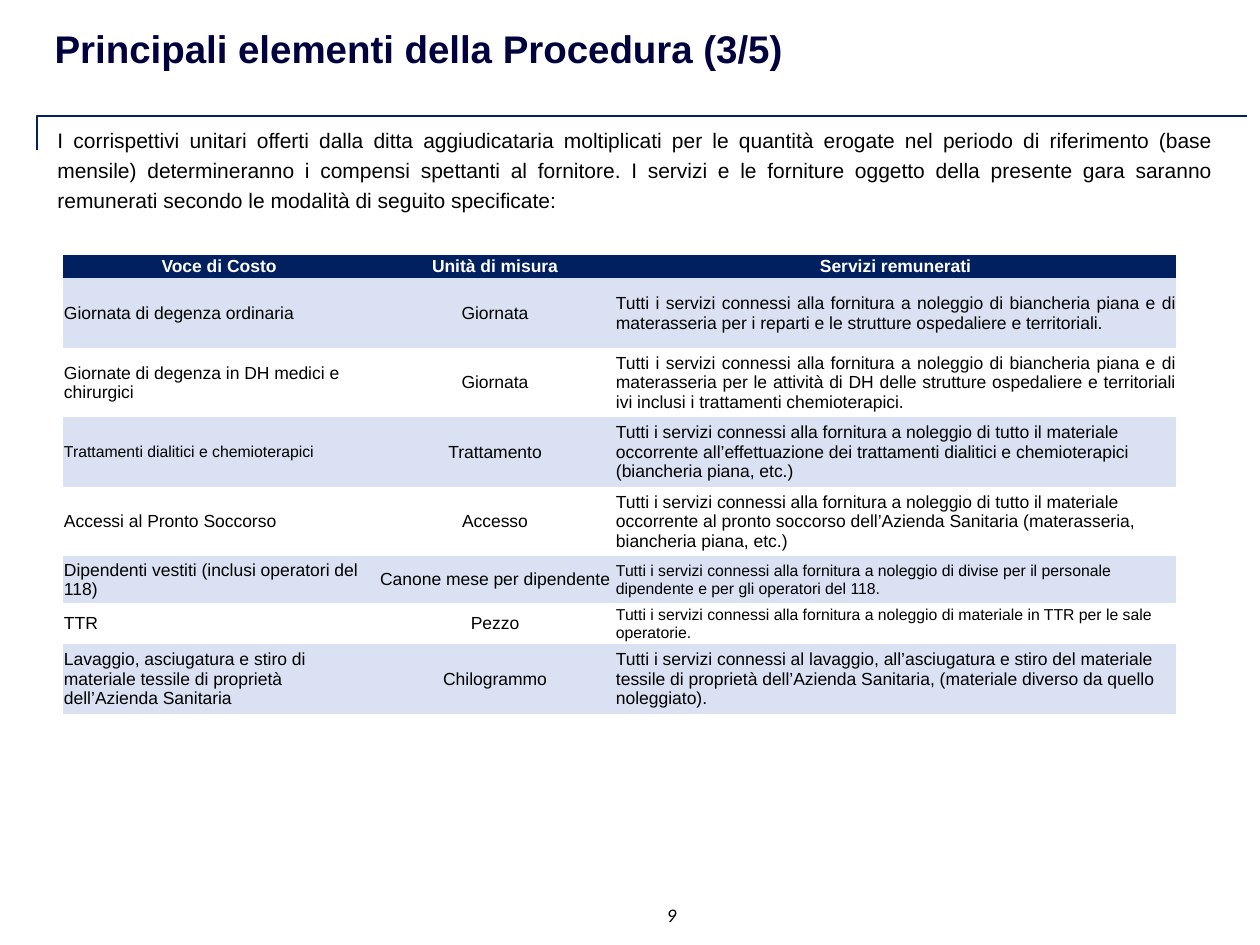
from typing import NamedTuple

from lxml.etree import SubElement
from pptx import Presentation
from pptx.dml.color import RGBColor
from pptx.enum.shapes import MSO_CONNECTOR as Connector
from pptx.enum.text import MSO_ANCHOR as Anchor, MSO_AUTO_SIZE as AutoSize, PP_ALIGN as Align
from pptx.oxml.ns import qn
from pptx.util import Emu, Pt

PX_PER_INCH = 126
NAVY = RGBColor(0x00, 0x20, 0x60)
TITLE_NAVY = RGBColor(0x00, 0x00, 0x3E)
PALE_BLUE = RGBColor(0xD9, 0xE1, 0xF2)
BLACK = RGBColor(0, 0, 0)
WHITE = RGBColor(0xFF, 0xFF, 0xFF)
NO_STYLE_NO_GRID = "{2D5ABB26-0587-4C30-8999-92F81FD0307C}"


class Box(NamedTuple):
    left: int
    top: int
    width: int
    height: int


class CostItem(NamedTuple):
    name: str
    unit: str
    services: str
    height: int
    name_size: int = 10
    services_size: int = 10
    services_align: Align = Align.LEFT


TITLE = "Principali elementi della Procedura (3/5)"
INTRO = (
    "I corrispettivi unitari offerti dalla ditta aggiudicataria moltiplicati per le quantità "
    "erogate nel periodo di riferimento (base mensile) determineranno i compensi spettanti al "
    "fornitore. I servizi e le forniture oggetto della presente gara saranno remunerati secondo "
    "le modalità di seguito specificate:"
)
HEADERS = ("Voce di Costo", "Unità di misura", "Servizi remunerati")
HEADER_HEIGHT = 23
COLUMN_WIDTHS = (312, 240, 561)
RENTAL = "Tutti i servizi connessi alla fornitura a noleggio di "
LINEN = RENTAL + "biancheria piana e di materasseria per "
ALL_MATERIAL = RENTAL + "tutto il materiale occorrente "
COST_ITEMS = (
    CostItem("Giornata di degenza ordinaria", "Giornata",
             LINEN + "i reparti e le strutture ospedaliere e territoriali.",
             70, services_align=Align.JUSTIFY),
    CostItem("Giornate di degenza in DH medici e chirurgici", "Giornata",
             LINEN + "le attività di DH delle strutture ospedaliere e territoriali ivi inclusi "
             "i trattamenti chemioterapici.", 69, services_align=Align.JUSTIFY),
    CostItem("Trattamenti dialitici e chemioterapici", "Trattamento",
             ALL_MATERIAL + "all’effettuazione dei trattamenti dialitici e chemioterapici "
             "(biancheria piana, etc.)", 70, name_size=9),
    CostItem("Accessi al Pronto Soccorso", "Accesso",
             ALL_MATERIAL + "al pronto soccorso dell’Azienda Sanitaria (materasseria, "
             "biancheria piana, etc.)", 69),
    CostItem("Dipendenti vestiti (inclusi operatori del 118)", "Canone mese per dipendente",
             RENTAL + "divise per il personale dipendente e per gli operatori del 118.",
             47, services_size=9),
    CostItem("TTR", "Pezzo", RENTAL + "materiale in TTR per le sale operatorie.",
             41, services_size=9),
    CostItem("Lavaggio, asciugatura e stiro di materiale tessile di proprietà dell’Azienda Sanitaria",
             "Chilogrammo",
             "Tutti i servizi connessi al lavaggio, all’asciugatura e stiro del materiale tessile "
             "di proprietà dell’Azienda Sanitaria, (materiale diverso da quello noleggiato).", 70),
)


def px(length: float) -> Emu:
    return Emu(round(length * 914400 / PX_PER_INCH))


def place(shape, box: Box) -> None:
    shape.left, shape.top, shape.width, shape.height = map(px, box)


def write(frame, text: str, size: int, color: RGBColor, align: Align = Align.LEFT,
          font_name: str = "Arial", bold: bool = False, italic: bool = False):
    """Fill the frame with one formatted paragraph and return it."""
    frame.text = text
    paragraph = frame.paragraphs[0]
    paragraph.alignment = align
    font = paragraph.runs[0].font
    font.name, font.size, font.bold, font.italic = font_name, Pt(size), bold, italic
    font.color.rgb = color
    return paragraph


def add_title(slide) -> None:
    title = slide.shapes.title
    place(title, Box(42, 19, 764, 59))
    frame = title.text_frame
    write(frame, TITLE, 22, TITLE_NAVY, bold=True)
    frame.word_wrap = False
    frame.auto_size = AutoSize.SHAPE_TO_FIT_TEXT
    frame.vertical_anchor = Anchor.TOP


def add_corner_rule(slide, box: Box) -> None:
    """Draw one bent line along the left and top sides of the box."""
    # The connector is turned by 90 degrees, so its own box swaps width and height.
    left = box.left + (box.width - box.height) / 2
    top = box.top + (box.height - box.width) / 2
    rule = slide.shapes.add_connector(
        Connector.ELBOW, px(left + box.height), px(top + box.width), px(left), px(top))
    properties = rule._element.spPr
    properties.find(qn("a:xfrm")).set("rot", "5400000")
    properties.find(qn("a:prstGeom")).set("prst", "bentConnector2")
    rule.line.color.rgb = NAVY
    rule.line.width = Pt(1)
    SubElement(properties, qn("a:effectLst"))


def add_intro(slide) -> None:
    intro = slide.shapes.add_textbox(*map(px, Box(34, 116, 1192, 102)))
    frame = intro.text_frame
    frame.word_wrap = True
    paragraph = write(frame, INTRO, 12, BLACK, Align.JUSTIFY)
    paragraph.line_spacing = 1.2
    paragraph.space_after = Pt(3)
    paragraph._p.get_or_add_pPr().set("marL", str(px(11)))


def add_page_number(slide, number: str) -> None:
    box = slide.shapes.add_textbox(*map(px, Box(635, 903, 73, 24)))
    frame = box.text_frame
    frame.word_wrap = True
    frame.margin_left = frame.margin_top = frame.margin_right = frame.margin_bottom = 0
    write(frame, number, 11, BLACK, Align.CENTER, "Calibri", italic=True)


def fill_cell(cell, fill: RGBColor | None, text: str, size: int, color: RGBColor,
              align: Align, bold: bool = False) -> None:
    cell.margin_left = cell.margin_top = cell.margin_right = px(1)
    cell.margin_bottom = 0
    cell.vertical_anchor = Anchor.MIDDLE
    if fill is None:
        cell.fill.background()
    else:
        cell.fill.solid()
        cell.fill.fore_color.rgb = fill
    write(cell.text_frame, text, size, color, align, bold=bold)


def add_cost_table(slide) -> None:
    heights = [HEADER_HEIGHT] + [item.height for item in COST_ITEMS]
    box = Box(63, 255, sum(COLUMN_WIDTHS), sum(heights))
    table = slide.shapes.add_table(len(heights), len(HEADERS), *map(px, box)).table
    table.horz_banding = False
    table._tbl.tblPr.find(qn("a:tableStyleId")).text = NO_STYLE_NO_GRID
    for column, width in zip(table.columns, COLUMN_WIDTHS):
        column.width = px(width)
    for row, height in zip(table.rows, heights):
        row.height = px(height)

    for column, header in enumerate(HEADERS):
        fill_cell(table.cell(0, column), NAVY, header, 10, WHITE, Align.CENTER, bold=True)
    for row, item in enumerate(COST_ITEMS, start=1):
        fill = PALE_BLUE if row % 2 else None
        fill_cell(table.cell(row, 0), fill, item.name, item.name_size, BLACK, Align.LEFT)
        fill_cell(table.cell(row, 1), fill, item.unit, 10, BLACK, Align.CENTER)
        fill_cell(table.cell(row, 2), fill, item.services, item.services_size, BLACK,
                  item.services_align)


def main() -> None:
    deck = Presentation()
    deck.slide_width, deck.slide_height = px(1260), px(945)
    slide = deck.slides.add_slide(deck.slide_layouts[5])
    add_corner_rule(slide, Box(37, 116, 1210, 34))
    add_intro(slide)
    add_title(slide)
    add_page_number(slide, "9")
    add_cost_table(slide)
    deck.save("out.pptx")


if __name__ == "__main__":
    main()
